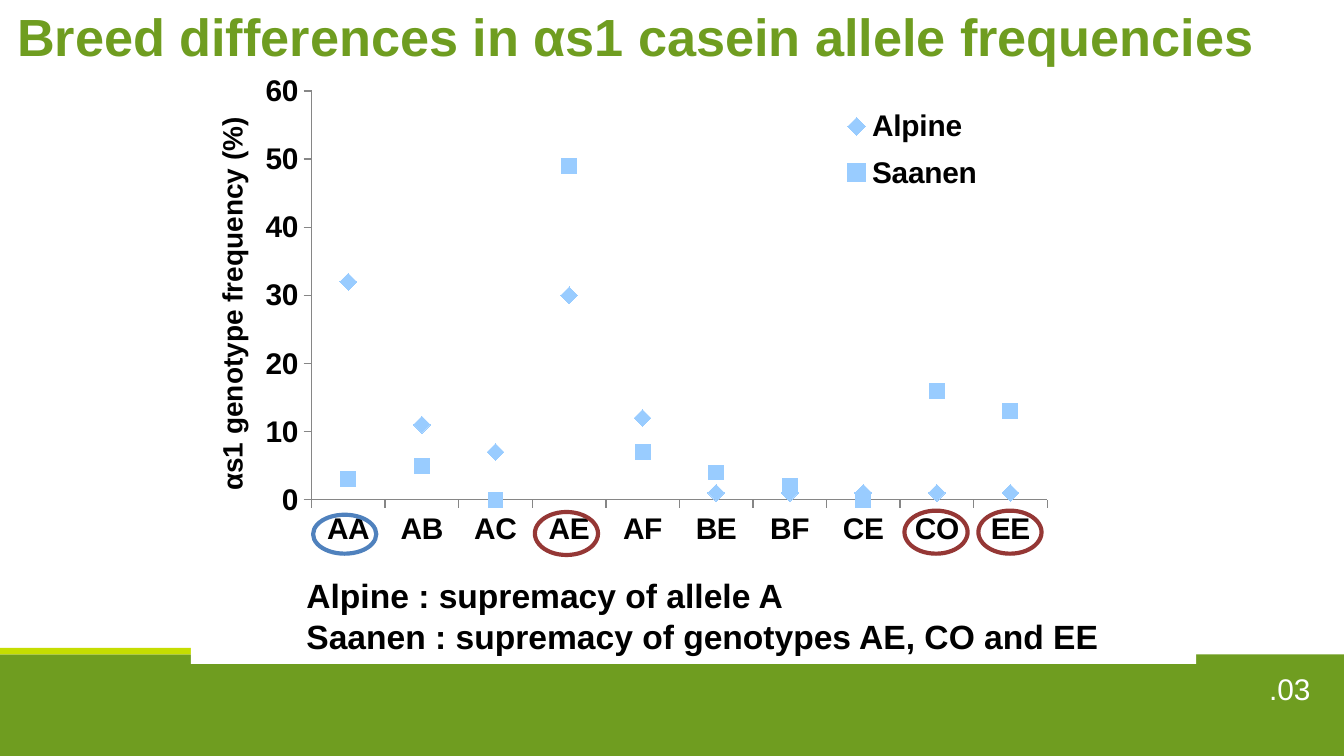
"""Build a slide on casein allele frequencies in two goat breeds."""
from pptx import Presentation
from pptx.chart.data import CategoryChartData
from pptx.dml.color import RGBColor
from pptx.enum.chart import XL_CHART_TYPE, XL_LEGEND_POSITION, XL_MARKER_STYLE, XL_TICK_MARK
from pptx.enum.shapes import MSO_SHAPE
from pptx.enum.text import PP_ALIGN
from pptx.oxml import parse_xml
from pptx.oxml.ns import nsdecls, qn
from pptx.util import Inches, Pt

COLORS = {name: RGBColor.from_string(value) for name, value in {
    "green": "6F9D20", "lime": "C5DD01", "white": "FFFFFF", "black": "000000",
    "blue": "4F81BD", "red": "953735", "sky": "99CCFF", "gray": "868686"}.items()}
FONT = "Arial"
CELL = Inches(0.1)
COLS, ROWS = 100, 56.25

deck = Presentation()
deck.slide_width, deck.slide_height = int(COLS * CELL), int(ROWS * CELL)
slide = deck.slides.add_slide(deck.slide_layouts[6])


def draw(kind, cells, fill=None, line=None):
    shape = slide.shapes.add_shape(kind, *[int(n * CELL) for n in cells])
    shape.shadow.inherit = False
    if fill:
        shape.fill.solid()
        shape.fill.fore_color.rgb = COLORS[fill]
    else:
        shape.fill.background()
    if line:
        shape.line.color.rgb = COLORS[line]
        shape.line.width = Pt(2.25)
    else:
        shape.line.fill.background()
    return shape


def write(text, cells, size, color, bold=True, align=PP_ALIGN.LEFT, fill=None, inset=1):
    box = slide.shapes.add_textbox(*[int(n * CELL) for n in cells])
    if fill:
        box.fill.solid()
        box.fill.fore_color.rgb = COLORS[fill]
    frame = box.text_frame
    frame.word_wrap = True
    frame.margin_left = int(inset * CELL)
    frame.text = text
    for para in frame.paragraphs:
        para.alignment = align
        font = para.runs[0].font
        font.name, font.size, font.bold = FONT, Pt(size), bold
        font.color.rgb = COLORS[color]


draw(MSO_SHAPE.RECTANGLE, (0, 48.7, COLS, ROWS - 48.7), fill="green")
draw(MSO_SHAPE.RECTANGLE, (0, 48.2, 15.4, 0.5), fill="lime")
write(".03", (86.2, 49.4, 12.3, 2.7), 16, "white", bold=False, align=PP_ALIGN.RIGHT)
write("Breed differences in αs1 casein allele frequencies", (0.3, -0.2, COLS, 5.7), 28, "green")

data = CategoryChartData()
data.categories = ["AA", "AB", "AC", "AE", "AF", "BE", "BF", "CE", "CO", "EE"]
data.add_series("Alpine", (32, 11, 7, 30, 12, 1, 1, 1, 1, 1))
data.add_series("Saanen", (3, 5, 0, 49, 7, 4, 2, 0, 16, 13))
area = [int(n * CELL) for n in (11.4, 5.2, 69.3, 39.5)]
chart = slide.shapes.add_chart(XL_CHART_TYPE.LINE_MARKERS, *area, data).chart
chart.has_title = False
chart.font.name, chart.font.size, chart.font.bold = FONT, Pt(16), True
chart.font.color.rgb = COLORS["black"]

marks = ((XL_MARKER_STYLE.DIAMOND, 9), (XL_MARKER_STYLE.SQUARE, 8))
for series, (style, size) in zip(chart.plots[0].series, marks):
    series.smooth = False
    series.format.line.fill.background()
    series.marker.style, series.marker.size = style, size
    series.marker.format.fill.solid()
    series.marker.format.fill.fore_color.rgb = COLORS["sky"]
    series.marker.format.line.fill.background()

for axis in (chart.category_axis, chart.value_axis):
    axis.has_major_gridlines = False
    axis.major_tick_mark = XL_TICK_MARK.OUTSIDE
    axis.minor_tick_mark = XL_TICK_MARK.NONE
    axis.format.line.color.rgb = COLORS["gray"]
scale = chart.value_axis
scale.minimum_scale, scale.maximum_scale, scale.major_unit = 0, 60, 10
title = scale.axis_title.text_frame
title.text = "αs1 genotype frequency (%)"
font = title.paragraphs[0].runs[0].font
font.name, font.size, font.bold = FONT, Pt(15), True
font.color.rgb = COLORS["black"]

chart.has_legend = True
chart.legend.position = XL_LEGEND_POSITION.RIGHT
chart.legend.include_in_layout = False
plot = chart._chartSpace.chart.plotArea
for part, index, target, share in (
        (plot, 0, '<c:layoutTarget val="inner"/>', (0.17, 0.04, 0.79, 0.77)),
        (scale.axis_title._element, 1, "", (0.06, 0.08)),
        (chart.legend._element, 1, "", (0.71, 0.05, 0.21, 0.2))):
    old = part.find(qn("c:layout"))
    if old is not None:
        part.remove(old)
    modes = '<c:xMode val="edge"/><c:yMode val="edge"/>'
    sizes = "".join(f'<c:{name} val="{n}"/>' for name, n in zip("xywh", share))
    part.insert(index, parse_xml(
        f'<c:layout {nsdecls("c")}><c:manualLayout>{target}{modes}{sizes}</c:manualLayout></c:layout>'))

write("Alpine : supremacy of allele A\nSaanen : supremacy of genotypes AE, CO and EE",
      (14.2, 42.3, 74.8, 7.1), 18, "black", fill="white", inset=8.6)

for slot, top, high, color in ((0, 38.3, 2.9, "blue"), (3, 38.1, 3.2, "red"),
                               (8, 38, 3.2, "red"), (9, 38, 3.2, "red")):
    draw(MSO_SHAPE.OVAL, (23.3 + 5.5 * slot, top, 4.7, high), line=color)

deck.save("out.pptx")
